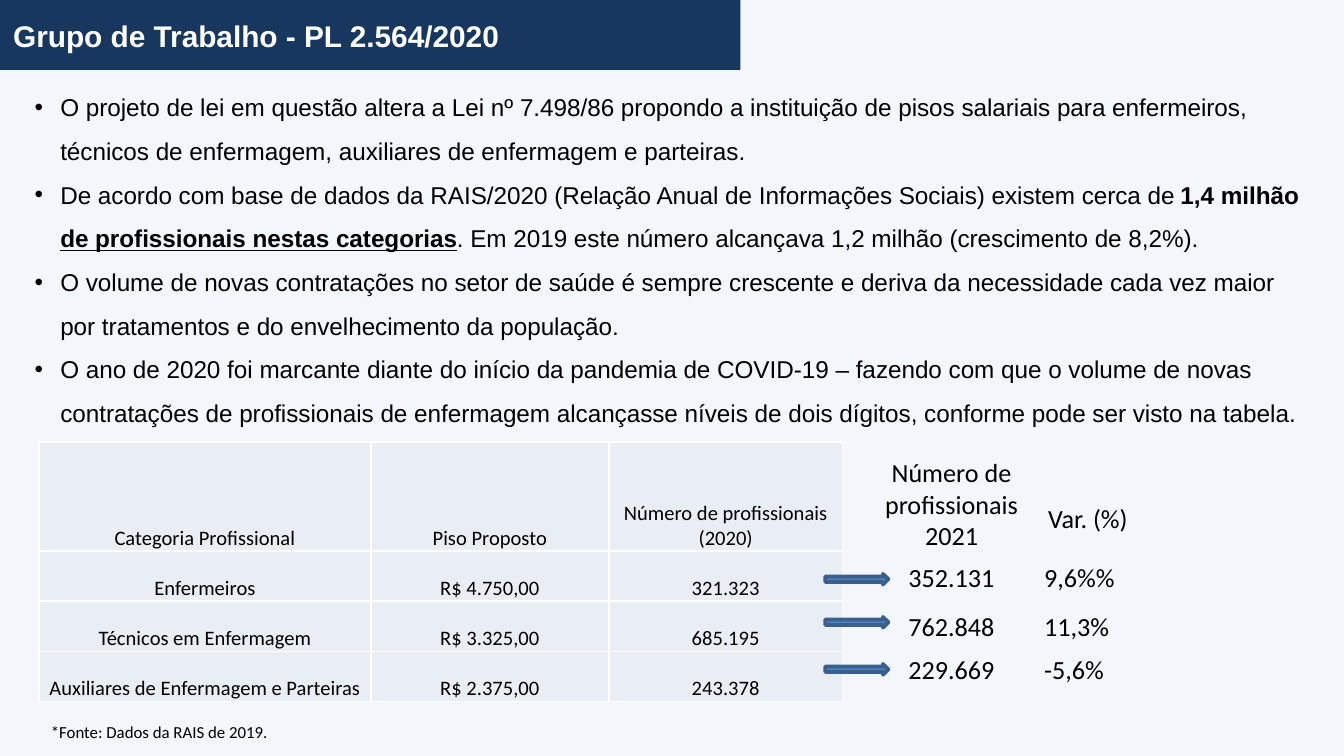
from dataclasses import dataclass

from lxml.etree import SubElement
from pptx import Presentation
from pptx.dml.color import RGBColor
from pptx.enum.shapes import MSO_SHAPE
from pptx.enum.text import MSO_ANCHOR, PP_ALIGN
from pptx.oxml import parse_xml
from pptx.oxml.ns import nsdecls, qn
from pptx.util import Inches, Pt


@dataclass(frozen=True)
class Theme:
    background: str = "F3F6FB"
    banner: str = "17375E"
    cell: str = "E9EDF4"
    border: str = "FFFFFF"
    arrow: str = "4F81BD"
    arrow_line: str = "3A5F8C"
    text: str = "000000"
    title_text: str = "FFFFFF"
    heading_font: str = "Arial"
    data_font: str = "Calibri"
    title: int = 16
    body: int = 13
    table: int = 11
    figure: int = 14
    source: int = 9


THEME = Theme()

BULLETS = [
    [("O projeto de lei em questão altera a Lei nº 7.498/86 propondo a instituição de pisos "
      "salariais para enfermeiros, técnicos de enfermagem, auxiliares de enfermagem e parteiras.", "")],
    [("De acordo com base de dados da RAIS/2020 (Relação Anual de Informações Sociais) "
      "existem cerca de ", ""),
     ("1,4 milhão ", "b"),
     ("de profissionais nestas categorias", "bu"),
     (". Em 2019 este número alcançava 1,2 milhão (crescimento de 8,2%).", "")],
    [("O volume de novas contratações no setor de saúde é sempre crescente e deriva da "
      "necessidade cada vez maior por tratamentos e do envelhecimento da população.", "")],
    [("O ano de 2020 foi marcante diante do início da pandemia de COVID-19 – fazendo com que o "
      "volume de novas contratações de profissionais de enfermagem alcançasse níveis de dois "
      "dígitos, conforme pode ser visto na tabela.", "")],
]
TABLE_ROWS = [
    ("Categoria Profissional", "Piso Proposto", "Número de profissionais (2020)"),
    ("Enfermeiros", "R$ 4.750,00", "321.323"),
    ("Técnicos em Enfermagem", "R$ 3.325,00", "685.195"),
    ("Auxiliares de Enfermagem e Parteiras", "R$ 2.375,00", "243.378"),
]
# Arrow top and text top (from the region's top), professionals in 2021, variation
COMPARISONS = [
    (0.92, 0.78, "352.131", "9,6%%"),
    (1.24, 1.14, "762.848", "11,3%"),
    (1.59, 1.46, "229.669", "-5,6%"),
]


def rgb(value):
    return RGBColor.from_string(value)


def add_run(p, text, size, font=THEME.data_font, color=THEME.text, style=""):
    r = p.add_run()
    r.text = text
    r.font.size = Pt(size)
    r.font.name = font
    r.font.color.rgb = rgb(color)
    r.font.bold = "b" in style
    r.font.underline = "u" in style


def add_text_frame(s, left, top, width, height, wrap=True):
    box = s.shapes.add_textbox(Inches(left), Inches(top), Inches(width), Inches(height))
    tf = box.text_frame
    tf.word_wrap = wrap
    return tf


def add_label(s, left, top, width, height, lines, size, align=PP_ALIGN.LEFT):
    tf = add_text_frame(s, left, top, width, height)
    for i, line in enumerate(lines):
        p = tf.add_paragraph() if i else tf.paragraphs[0]
        p.alignment = align
        add_run(p, line, size)


def add_box(s, kind, left, top, width, height, fill, line=None):
    sp = s.shapes.add_shape(kind, Inches(left), Inches(top), Inches(width), Inches(height))
    sp.shadow.inherit = False
    sp.fill.solid()
    sp.fill.fore_color.rgb = rgb(fill)
    if line:
        sp.line.color.rgb = rgb(line)
        sp.line.width = Pt(2)
    else:
        sp.line.fill.background()


def add_title(s, left, top, width, height):
    add_box(s, MSO_SHAPE.RECTANGLE, left, top, width, height, THEME.banner)
    tf = add_text_frame(s, left, top + 0.08, 3.93, 0.37, wrap=False)
    add_run(tf.paragraphs[0], "Grupo de Trabalho - PL 2.564/2020", THEME.title,
            THEME.heading_font, THEME.title_text, "b")


def add_bullets(s, left, top, width, height):
    tf = add_text_frame(s, left, top, width, height)
    indent = Inches(0.19)
    for i, runs in enumerate(BULLETS):
        p = tf.add_paragraph() if i else tf.paragraphs[0]
        p.line_spacing = 1.5
        pPr = p._p.get_or_add_pPr()
        pPr.set("marL", str(indent))
        pPr.set("indent", str(-indent))
        SubElement(pPr, qn("a:buFont"), typeface=THEME.heading_font)
        SubElement(pPr, qn("a:buChar"), char="•")
        for text, style in runs:
            add_run(p, text, THEME.body, THEME.heading_font, style=style)


def set_borders(cell):
    tcPr = cell._tc.get_or_add_tcPr()
    for i, side in enumerate(("lnL", "lnR", "lnT", "lnB")):
        tcPr.insert(i, parse_xml(
            f'<a:{side} {nsdecls("a")} w="{Pt(1)}"><a:solidFill>'
            f'<a:srgbClr val="{THEME.border}"/></a:solidFill></a:{side}>'))


def add_salary_table(s, left, top, width, height):
    shape = s.shapes.add_table(len(TABLE_ROWS), 3, Inches(left), Inches(top),
                               Inches(width), Inches(height))
    table = shape.table
    table.first_row = table.horz_banding = False
    for column, size in zip(table.columns, (2.47, 1.77, 1.74)):
        column.width = Inches(size)
    header = 0.81
    for i, row in enumerate(table.rows):
        row.height = Inches((height - header) / (len(TABLE_ROWS) - 1) if i else header)
    for i, values in enumerate(TABLE_ROWS):
        for j, text in enumerate(values):
            cell = table.cell(i, j)
            cell.fill.solid()
            cell.fill.fore_color.rgb = rgb(THEME.cell)
            cell.vertical_anchor = MSO_ANCHOR.BOTTOM
            cell.margin_left = cell.margin_right = cell.margin_top = Inches(0.01)
            cell.margin_bottom = 0
            set_borders(cell)
            p = cell.text_frame.paragraphs[0]
            p.alignment = PP_ALIGN.CENTER
            add_run(p, text, THEME.table)


def add_comparison(s, left, top):
    # Column headings
    add_label(s, left + 0.13, top, 1.62, 0.81, ("Número de profissionais", "2021"),
              THEME.figure, PP_ALIGN.CENTER)
    add_label(s, left + 1.41, top + 0.34, 1.09, 0.34, ("Var. (%)",),
              THEME.figure, PP_ALIGN.CENTER)
    # One arrow and two figures per category
    for arrow_top, text_top, count, change in COMPARISONS:
        add_box(s, MSO_SHAPE.RIGHT_ARROW, left, top + arrow_top, 0.47, 0.08,
                THEME.arrow, THEME.arrow_line)
        for offset, text in ((0.52, count), (1.53, change)):
            add_label(s, left + offset, top + text_top, 1.09, 0.34, (text,), THEME.figure)


def main():
    prs = Presentation()
    # Widescreen 16:9
    prs.slide_width, prs.slide_height = Inches(10), Inches(10 * 9 / 16)
    s = prs.slides.add_slide(prs.slide_layouts[6])
    s.background.fill.solid()
    s.background.fill.fore_color.rgb = rgb(THEME.background)

    add_bullets(s, 0.16, 0.53, 9.69, 2.69)
    add_title(s, 0, 0, 5.51, 0.52)
    add_label(s, 0.28, 5.32, 8.19, 0.25, ("*Fonte: Dados da RAIS de 2019.",), THEME.source)
    add_salary_table(s, 0.29, 3.29, 5.98, 1.93)
    add_comparison(s, 6.14, 3.35)
    prs.save("out.pptx")


if __name__ == "__main__":
    main()
